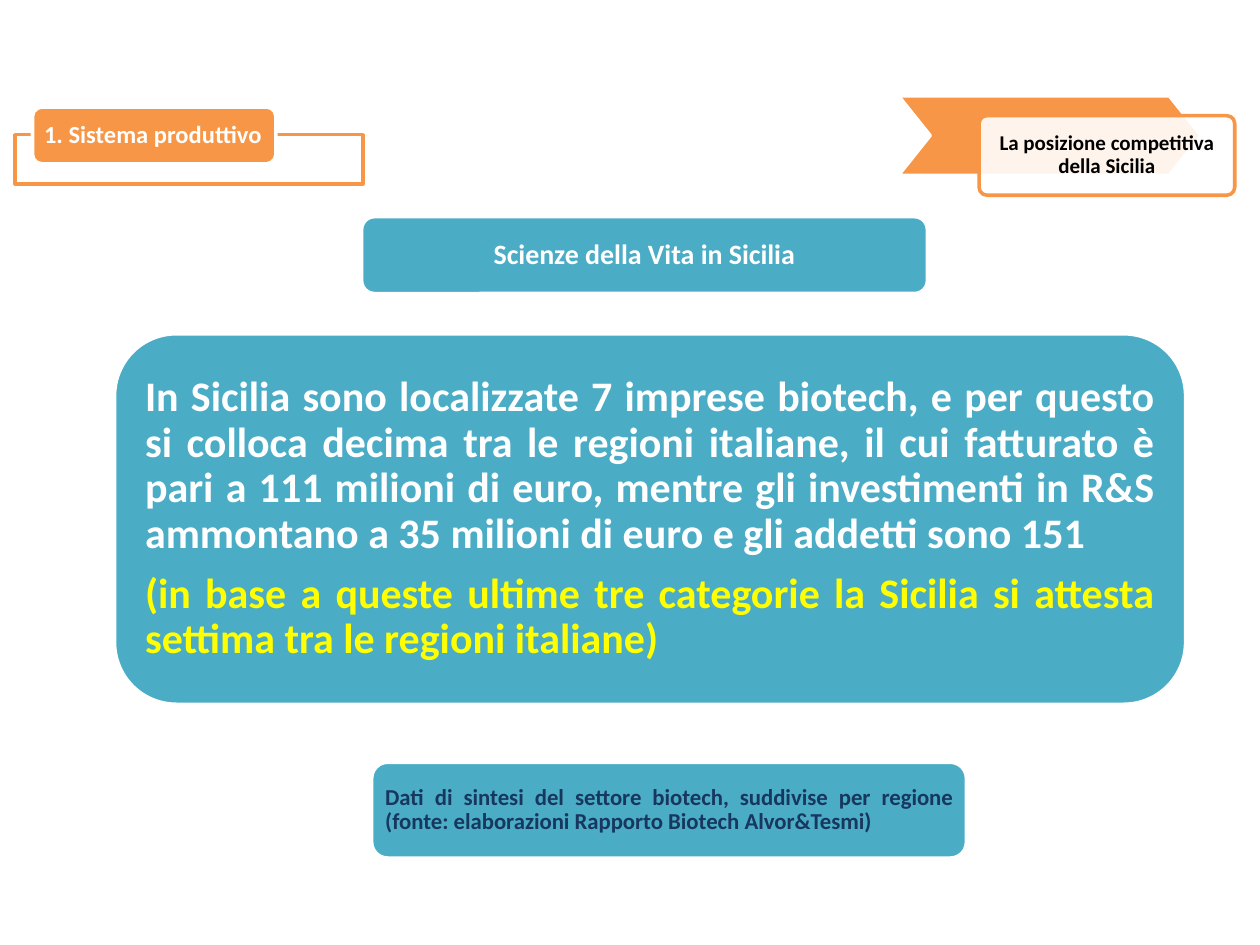
from dataclasses import dataclass

from lxml import etree
from pptx import Presentation
from pptx.dml.color import RGBColor
from pptx.enum.shapes import MSO_SHAPE
from pptx.enum.text import MSO_ANCHOR, PP_ALIGN
from pptx.oxml.ns import qn
from pptx.util import Inches, Pt

RECT, ROUND, CHEVRON = MSO_SHAPE.RECTANGLE, MSO_SHAPE.ROUNDED_RECTANGLE, MSO_SHAPE.CHEVRON
LEFT, CENTER, JUSTIFY = PP_ALIGN.LEFT, PP_ALIGN.CENTER, PP_ALIGN.JUSTIFY
MIDDLE = MSO_ANCHOR.MIDDLE
WIDE, HIGH = Inches(10), Inches(7.5)


@dataclass(frozen=True)
class Theme:
    font: str = "Calibri"
    orange: str = "F79646"
    teal: str = "4BACC6"
    white: str = "FFFFFF"
    black: str = "000000"
    yellow: str = "FFFF00"
    navy: str = "17375E"
    label: int = 14
    badge: int = 12
    title: int = 16
    body: int = 24
    note: int = 13
    line: int = 2


THEME = Theme()


def area(left, top, width, height):
    """Box in EMU from percentages of the slide."""
    return (WIDE * left / 100, HIGH * top / 100, WIDE * width / 100, HIGH * height / 100)


def part(box, left, top, width, height):
    """Box in EMU from shares of another box."""
    x, y, w, h = box
    return (x + w * left, y + h * top, w * width, h * height)


def draw(slide, kind, box, fill, line, alpha=None, adj=None):
    shape = slide.shapes.add_shape(kind, *(int(v) for v in box))
    shape.shadow.inherit = False
    shape.fill.solid()
    shape.fill.fore_color.rgb = RGBColor.from_string(fill)
    shape.line.color.rgb = RGBColor.from_string(line)
    shape.line.width = Pt(THEME.line)
    if adj is not None:
        shape.adjustments[0] = adj
    if alpha is not None:
        color = shape.fill._xPr.find(qn("a:solidFill"))[0]
        etree.SubElement(color, qn("a:alpha")).set("val", str(alpha * 1000))
    return shape


def write(shape, lines, size, align, pad_x, pad_y):
    """Fill a shape with (text, colour) paragraphs."""
    frame = shape.text_frame
    look = {
        "word_wrap": True, "vertical_anchor": MIDDLE,
        "margin_left": Inches(pad_x), "margin_right": Inches(pad_x),
        "margin_top": Inches(pad_y), "margin_bottom": Inches(pad_y),
    }
    for name, value in look.items():
        setattr(frame, name, value)
    for i, (text, color) in enumerate(lines):
        para = frame.add_paragraph() if i else frame.paragraphs[0]
        para.alignment = align
        para.line_spacing = 0.9
        para.space_after = Pt(0.35 * size)
        run = para.add_run()
        run.text = text
        for name, value in {"name": THEME.font, "size": Pt(size), "bold": True}.items():
            setattr(run.font, name, value)
        run.font.color.rgb = RGBColor.from_string(color)


def add_label(slide, box, text):
    """Section label sitting on an outlined bar."""
    draw(slide, RECT, part(box, 0, 0.36, 1, 0.64), THEME.white, THEME.orange, alpha=90)
    tab = draw(slide, ROUND, part(box, 0.05, 0, 0.7, 0.74), THEME.orange, THEME.white)
    write(tab, [(text, THEME.white)], THEME.label, LEFT, 0.07, 0)


def add_badge(slide, box, text):
    """Chevron with a translucent card over its tip."""
    draw(slide, CHEVRON, part(box, 0, 0, 0.9, 0.8), THEME.orange, THEME.white, adj=0.4)
    card = draw(slide, ROUND, part(box, 0.24, 0.2, 0.76, 0.8),
                THEME.white, THEME.orange, alpha=90, adj=0.1)
    write(card, [(text, THEME.black)], THEME.badge, CENTER, 0.09, 0.09)


def add_panel(slide, box, lines, size, align, pad):
    """Teal rounded panel with text."""
    panel = draw(slide, ROUND, box, THEME.teal, THEME.white)
    write(panel, lines, size, align, pad, pad)


def main():
    deck = Presentation()
    deck.slide_width, deck.slide_height = WIDE, HIGH
    slide = deck.slides.add_slide(deck.slide_layouts[6])

    # Header
    add_label(slide, area(1.2, 11.33, 27.6, 8.13), "1. Sistema produttivo")
    add_badge(slide, area(71.3, 10.13, 26.7, 10.53), "La posizione competitiva della Sicilia")

    # Title, main message and source
    add_panel(slide, area(28.7, 22.93, 44.9, 8.13),
              [("Scienze della Vita in Sicilia", THEME.white)], THEME.title, CENTER, 0.07)
    add_panel(slide, area(9.1, 35.33, 85, 39.2), [
        ("In Sicilia sono localizzate 7 imprese biotech, e per questo si colloca decima "
         "tra le regioni italiane, il cui fatturato è pari a 111 milioni di euro, mentre "
         "gli investimenti in R&S ammontano a 35 milioni di euro e gli addetti sono 151",
         THEME.white),
        ("(in base a queste ultime tre categorie la Sicilia si attesta settima "
         "tra le regioni italiane)", THEME.yellow),
    ], THEME.body, JUSTIFY, 0.1)
    add_panel(slide, area(29.5, 80.67, 47.2, 10.13), [
        ("Dati di sintesi del settore biotech, suddivise per regione "
         "(fonte: elaborazioni Rapporto Biotech Alvor&Tesmi)", THEME.navy),
    ], THEME.note, JUSTIFY, 0.07)

    deck.save("out.pptx")


if __name__ == "__main__":
    main()
